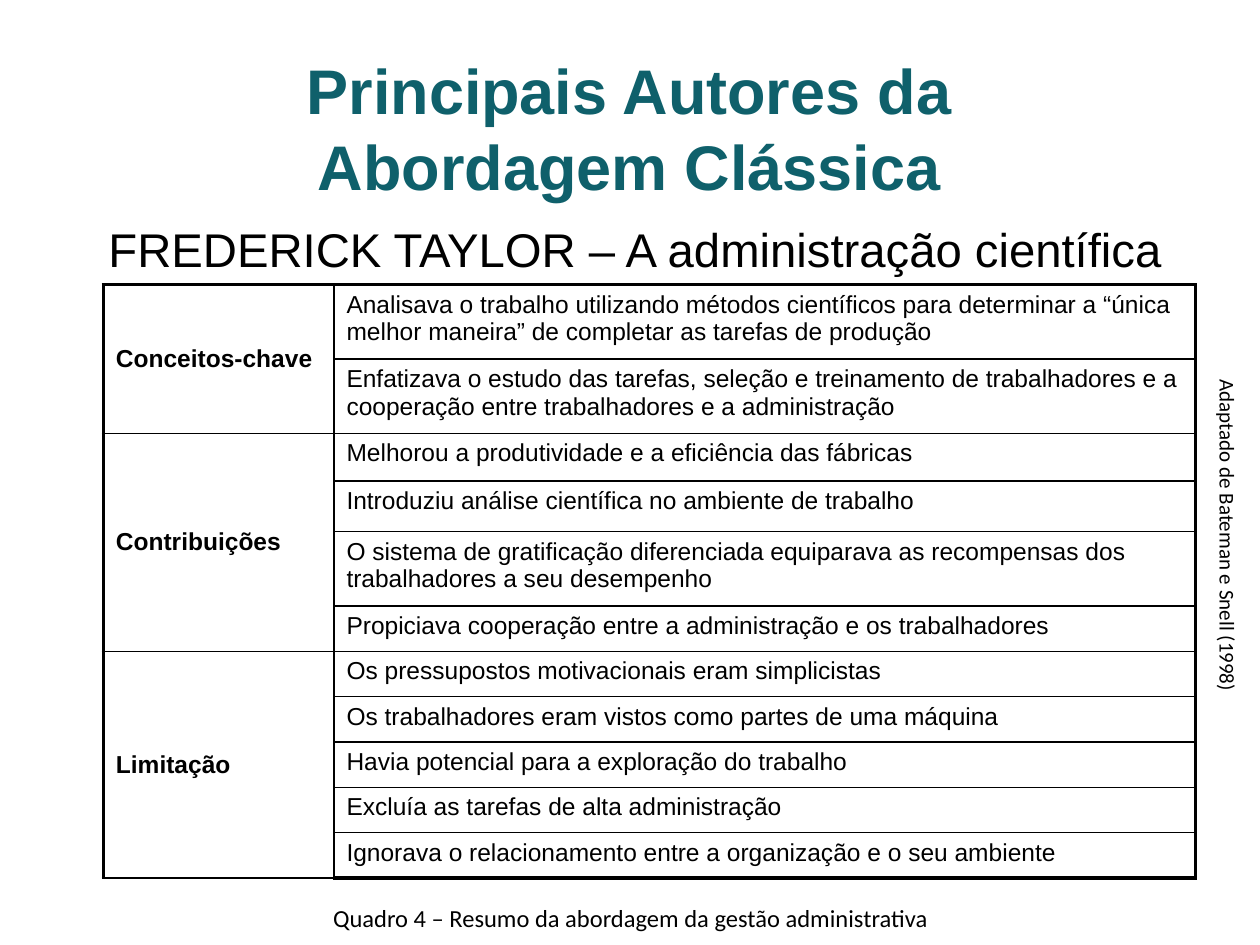
from pptx import Presentation
from pptx.dml.color import RGBColor
from pptx.enum.text import MSO_ANCHOR, MSO_AUTO_SIZE, PP_ALIGN
from pptx.oxml import parse_xml
from pptx.oxml.ns import nsdecls
from pptx.util import Inches, Pt

BLACK = "000000"
TEAL = "0F606B"
TABLE_LEFT, TABLE_TOP = 0.82, 2.26
COLUMN_WIDTHS = [1.83, 6.84]
ROW_HEIGHTS = [0.59, 0.59, 0.38, 0.4, 0.59] + [0.36] * 6
THIN, THICK = 1, 2.25

TOPICS = {
    "Conceitos-chave": [
        "Analisava o trabalho utilizando métodos científicos para determinar a “única melhor maneira” de completar as tarefas de produção",
        "Enfatizava o estudo das tarefas, seleção e treinamento de trabalhadores e a cooperação entre trabalhadores e a administração",
    ],
    "Contribuições": [
        "Melhorou a produtividade e a eficiência das fábricas",
        "Introduziu análise científica no ambiente de trabalho",
        "O sistema de gratificação diferenciada equiparava as recompensas dos trabalhadores a seu desempenho",
        "Propiciava cooperação entre a administração e os trabalhadores",
    ],
    "Limitação": [
        "Os pressupostos motivacionais eram simplicistas",
        "Os trabalhadores eram vistos como partes de uma máquina",
        "Havia potencial para a exploração do trabalho",
        "Excluía as tarefas de alta administração",
        "Ignorava o relacionamento entre a organização e o seu ambiente",
    ],
}


def set_values(target, values):
    for name, value in values.items():
        setattr(target, name, value)


def color(value):
    return RGBColor.from_string(value)


def write_text(frame, text, size, name="Arial", fill=BLACK, bold=False, align=PP_ALIGN.LEFT):
    para = frame.paragraphs[0]
    para.alignment = align
    span = para.add_run()
    span.text = text
    set_values(span.font, {"size": Pt(size), "name": name, "bold": bold})
    span.font.color.rgb = color(fill)


def add_title(page, text, left, top, width, height):
    title = page.shapes.title
    set_values(title, {
        "left": Inches(left), "top": Inches(top),
        "width": Inches(width), "height": Inches(height),
    })
    set_values(title.text_frame, {
        "word_wrap": True,
        "auto_size": MSO_AUTO_SIZE.NONE,
        "vertical_anchor": MSO_ANCHOR.MIDDLE,
    })
    write_text(title.text_frame, text, 36, fill=TEAL, bold=True, align=PP_ALIGN.CENTER)


def add_label(page, text, left, top, width, height, size, name, align, wrap=False, rotation=0):
    box = page.shapes.add_textbox(Inches(left), Inches(top), Inches(width), Inches(height))
    box.rotation = rotation
    box.text_frame.word_wrap = wrap
    write_text(box.text_frame, text, size, name, align=align)


def set_borders(cell, widths):
    properties = cell._tc.get_or_add_tcPr()
    for side, width in widths.items():
        properties.append(parse_xml(
            f'<a:ln{side} {nsdecls("a")} w="{int(Pt(width))}"><a:solidFill>'
            f'<a:srgbClr val="{BLACK}"/></a:solidFill></a:ln{side}>'
        ))


def format_cell(cell, row, column):
    last_row, last_column = len(ROW_HEIGHTS) - 1, len(COLUMN_WIDTHS) - 1
    set_borders(cell, {
        "L": THICK if column == 0 else THIN,
        "R": THICK if column == last_column else THIN,
        "T": THICK if row == 0 else THIN,
        "B": THICK if row == last_row else THIN,
    })
    cell.fill.background()
    set_values(cell, {
        "margin_left": Inches(0.1), "margin_right": Inches(0.1),
        "margin_top": Inches(0.05), "margin_bottom": Inches(0.05),
        "vertical_anchor": MSO_ANCHOR.MIDDLE if column == 0 else MSO_ANCHOR.TOP,
    })


def add_topic_table(page):
    table = page.shapes.add_table(
        len(ROW_HEIGHTS), len(COLUMN_WIDTHS), Inches(TABLE_LEFT), Inches(TABLE_TOP),
        Inches(sum(COLUMN_WIDTHS)), Inches(sum(ROW_HEIGHTS)),
    ).table
    set_values(table, {"first_row": False, "horz_banding": False})
    for column, width in zip(table.columns, COLUMN_WIDTHS):
        column.width = Inches(width)
    for row, height in zip(table.rows, ROW_HEIGHTS):
        row.height = Inches(height)
    for row in range(len(ROW_HEIGHTS)):
        for column in range(len(COLUMN_WIDTHS)):
            format_cell(table.cell(row, column), row, column)
    first = 0
    for topic, points in TOPICS.items():
        heading = table.cell(first, 0)
        heading.merge(table.cell(first + len(points) - 1, 0))
        write_text(heading.text_frame, topic, 14, bold=True)
        for row, point in enumerate(points, first):
            write_text(table.cell(row, 1).text_frame, point, 14)
        first += len(points)


def main():
    deck = Presentation()
    set_values(deck, {"slide_width": Inches(10), "slide_height": Inches(7.5)})
    page = deck.slides.add_slide(deck.slide_layouts[5])
    add_title(page, "Principais Autores da Abordagem Clássica", 1.06, 0.36, 7.87, 1.3)
    add_label(page, "FREDERICK TAYLOR – A administração científica",
              0.47, 1.7, 9.14, 0.55, 27, "Arial", PP_ALIGN.CENTER, wrap=True)
    add_topic_table(page)
    add_label(page, "Adaptado de Bateman e Snell (1998)",
              8.41, 4.11, 2.68, 0.29, 12, "Calibri", PP_ALIGN.LEFT, rotation=90)
    add_label(page, "Quadro 4 – Resumo da abordagem da gestão administrativa",
              2.53, 7.12, 4.95, 0.33, 14, "Calibri", PP_ALIGN.CENTER)
    deck.save("out.pptx")


if __name__ == "__main__":
    main()
